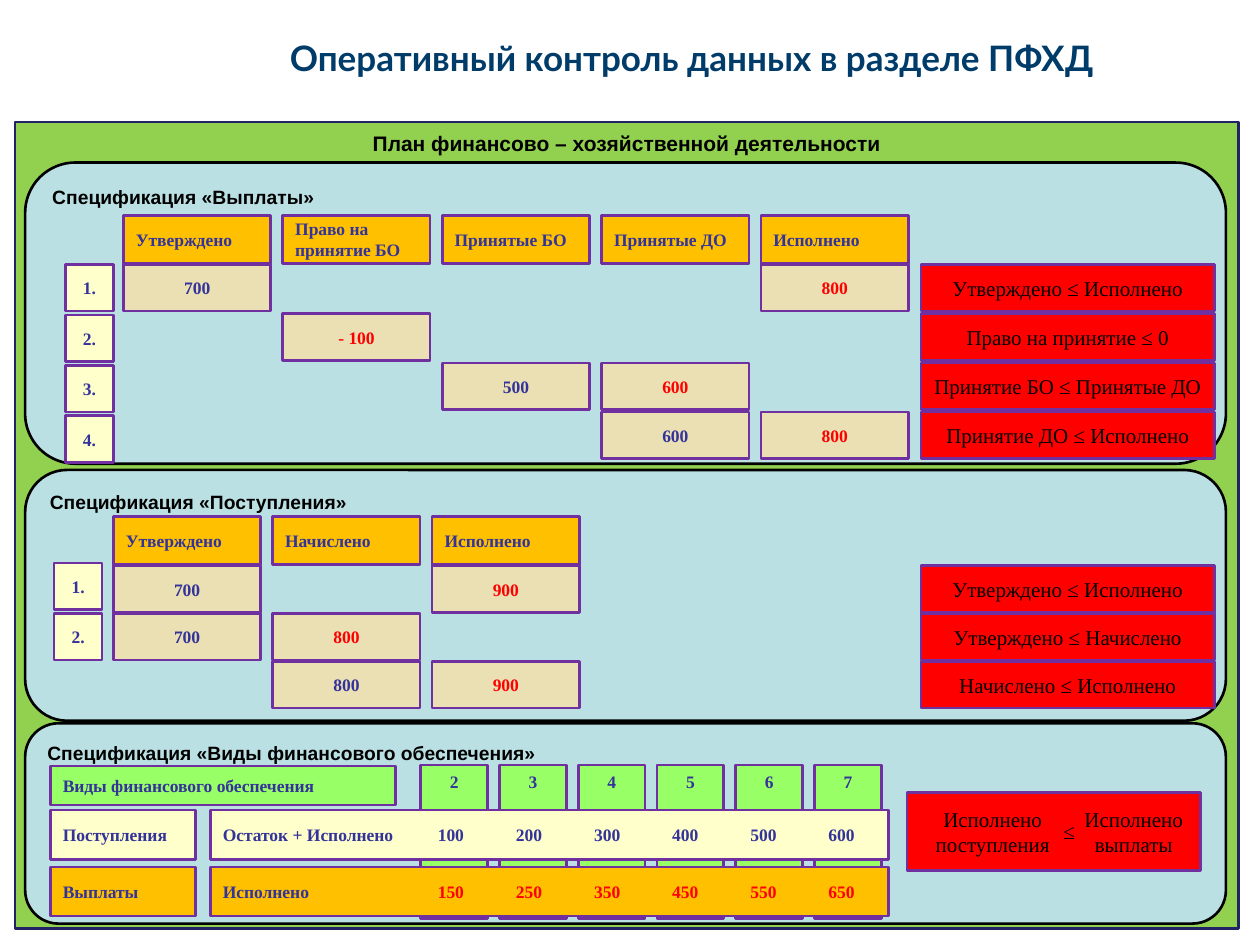
from pptx import Presentation
from pptx.dml.color import RGBColor
from pptx.enum import shapes, text
from pptx.oxml import parse_xml
from pptx.oxml.ns import nsdecls
from pptx.util import Inches, Pt

COLORS = {
    "title": "003C69", "frame": "92D050", "frame_line": "222267",
    "panel": "BBE0E3", "black": "000000", "border": "7030A0",
    "header": "FFC000", "value": "EAE0B4", "number": "FFFFCC",
    "source": "99FF66", "alert": "FF0000", "ink": "333399",
}
RECT = shapes.MSO_SHAPE.RECTANGLE
ROUNDED = shapes.MSO_SHAPE.ROUNDED_RECTANGLE
LEFT, CENTER, RIGHT = text.PP_ALIGN.LEFT, text.PP_ALIGN.CENTER, text.PP_ALIGN.RIGHT
TOP, MIDDLE = text.MSO_ANCHOR.TOP, text.MSO_ANCHOR.MIDDLE

# Content
TITLE = "Оперативный контроль данных в разделе ПФХД"
PLAN = "План финансово – хозяйственной деятельности"
PANELS = [  # caption, top, height
    ("Спецификация «Выплаты»", 1.29, 2.39),
    ("Спецификация «Поступления»", 3.73, 1.99),
    ("Спецификация «Виды финансового обеспечения»", 5.74, 1.59),
]
# Values are (row, column, text, is it wrong)
GRIDS = [
    {"left": 0.98, "header_top": 1.71, "top": 2.1, "row_step": 0.39,
     "number_left": 0.52, "number_top": 2.1, "number_step": 0.4,
     "headers": ["Утверждено", "Право на принятие БО", "Принятые БО",
                 "Принятые ДО", "Исполнено"],
     "numbers": ["1.", "2.", "3.", "4."],
     "values": [(0, 0, "700", False), (0, 4, "800", True),
                (1, 1, "- 100", True),
                (2, 2, "500", False), (2, 3, "600", True),
                (3, 3, "600", False), (3, 4, "800", True)],
     "rules": ["Утверждено ≤ Исполнено", "Право на принятие ≤ 0",
               "Принятие БО ≤ Принятые ДО", "Принятие ДО ≤ Исполнено"]},
    {"left": 0.9, "header_top": 4.1, "top": 4.49, "row_step": 0.38,
     "number_left": 0.43, "number_top": 4.47, "number_step": 0.4,
     "headers": ["Утверждено", "Начислено", "Исполнено"],
     "numbers": ["1.", "2."],
     "values": [(0, 0, "700", False), (0, 2, "900", True),
                (1, 0, "700", False), (1, 1, "800", True),
                (2, 1, "800", False), (2, 2, "900", True)],
     "rules": ["Утверждено ≤ Исполнено", "Утверждено ≤ Начислено",
               "Начислено ≤ Исполнено"]},
]
COLUMN_STEP, CELL_W, CELL_H = 1.265, 1.17, 0.37

FUNDING = "Виды финансового обеспечения"
FUNDING_CODES = ["2", "3", "4", "5", "6", "7"]
CODE_LEFT, CODE_STEP = 3.34, 0.625
FLOWS = [  # name, measure, amounts, top, fill, colour of amounts
    ("Поступления", "Остаток + Исполнено",
     ["100", "200", "300", "400", "500", "600"], 6.43, "number", "ink"),
    ("Выплаты", "Исполнено",
     ["150", "250", "350", "450", "550", "650"], 6.88, "header", "alert"),
]
AMOUNT_TABS = [1.81 + 0.62 * i for i in range(len(FUNDING_CODES))]
COMPARISON = ["\tИсполнено\tИсполнено", "\tпоступления\tвыплаты"]
COMPARISON_TABS = [0.58, 1.7]

prs = Presentation()
prs.slide_width, prs.slide_height = Inches(10), Inches(7.5)
slide = prs.slides.add_slide(prs.slide_layouts[6])


def rgb(name):
    return RGBColor.from_string(COLORS[name])


def write(shape, lines, size=10, font="Times New Roman", color="ink", bold=True,
          align=CENTER, anchor=MIDDLE, tabs=(), line_spacing=None, after=None):
    """Each line is a string or a list of (string, colour) runs."""
    frame = shape.text_frame
    frame.word_wrap = True
    frame.vertical_anchor = anchor
    for i, line in enumerate([lines] if isinstance(lines, str) else lines):
        paragraph = frame.paragraphs[0] if i == 0 else frame.add_paragraph()
        if tabs:
            stops = "".join(f'<a:tab pos="{Inches(t)}" algn="ctr"/>' for t in tabs)
            paragraph._p.get_or_add_pPr().append(
                parse_xml(f'<a:tabLst {nsdecls("a")}>{stops}</a:tabLst>'))
        paragraph.alignment = align
        if line_spacing:
            paragraph.line_spacing = line_spacing
        if after:
            paragraph.space_after = Pt(after)
        for words, run_color in [(line, color)] if isinstance(line, str) else line:
            run = paragraph.add_run()
            run.text = words
            run.font.size, run.font.name, run.font.bold = Pt(size), font, bold
            run.font.color.rgb = rgb(run_color)


def box(lines, left, top, width, height, fill, line="border", kind=RECT, **style):
    shape = slide.shapes.add_shape(
        kind, Inches(left), Inches(top), Inches(width), Inches(height))
    shape.shadow.inherit = False
    shape.fill.solid()
    shape.fill.fore_color.rgb = rgb(fill)
    if line:
        shape.line.color.rgb = rgb(line)
        shape.line.width = Pt(1.5)
    else:
        shape.line.fill.background()
    write(shape, lines, **style)


# Title and outer frame
heading = slide.shapes.add_textbox(Inches(0.07), Inches(0.24), Inches(8.71), Inches(0.44))
write(heading, TITLE, size=20, font="Lato", color="title", align=RIGHT, anchor=TOP)
caption = dict(font="Arial", color="black", anchor=TOP, line_spacing=1.07, after=8)
box(PLAN, 0.12, 0.97, 9.71, 6.4, "frame", "frame_line", size=12, **caption)
for name, top, height in PANELS:
    box(name, 0.2, top, 9.53, height, "panel", "black", ROUNDED,
        size=11, align=LEFT, **caption)

# Payments and receipts
rule_style = dict(size=12, color="black", bold=False)
for grid in GRIDS:
    def column_left(column):
        return grid["left"] + column * COLUMN_STEP

    def row_top(row):
        return grid["top"] + row * grid["row_step"]

    for column, name in enumerate(grid["headers"]):
        box(name, column_left(column), grid["header_top"], CELL_W, 0.38, "header", align=LEFT)
    for row, number in enumerate(grid["numbers"]):
        box(number, grid["number_left"], grid["number_top"] + row * grid["number_step"],
            0.38, CELL_H, "number")
    for row, column, value, wrong in grid["values"]:
        box(value, column_left(column), row_top(row), CELL_W, CELL_H, "value",
            color="alert" if wrong else "ink")
    for row, rule in enumerate(grid["rules"]):
        box(rule, 7.31, row_top(row), 2.33, CELL_H, "alert", **rule_style)

# Types of funding
box(FUNDING, 0.4, 6.08, 2.74, 0.31, "source", align=LEFT)
for i, code in enumerate(FUNDING_CODES):
    box(code, CODE_LEFT + i * CODE_STEP, 6.07, 0.53, 1.22, "source", anchor=TOP)
for name, measure, amounts, top, fill, amount_color in FLOWS:
    box(name, 0.4, top, 1.15, 0.39, fill, align=LEFT)
    row = [(measure, "ink"), ("\t" + "\t".join(amounts), amount_color)]
    box([row], 1.67, top, 5.38, 0.39, fill, align=LEFT, tabs=AMOUNT_TABS)

# Comparison of receipts with payments
box(COMPARISON, 7.2, 6.29, 2.33, 0.62, "alert", align=LEFT, tabs=COMPARISON_TABS, **rule_style)
box("≤", 8.34, 6.48, 0.28, 0.24, "alert", None, **rule_style)

prs.save("out.pptx")
